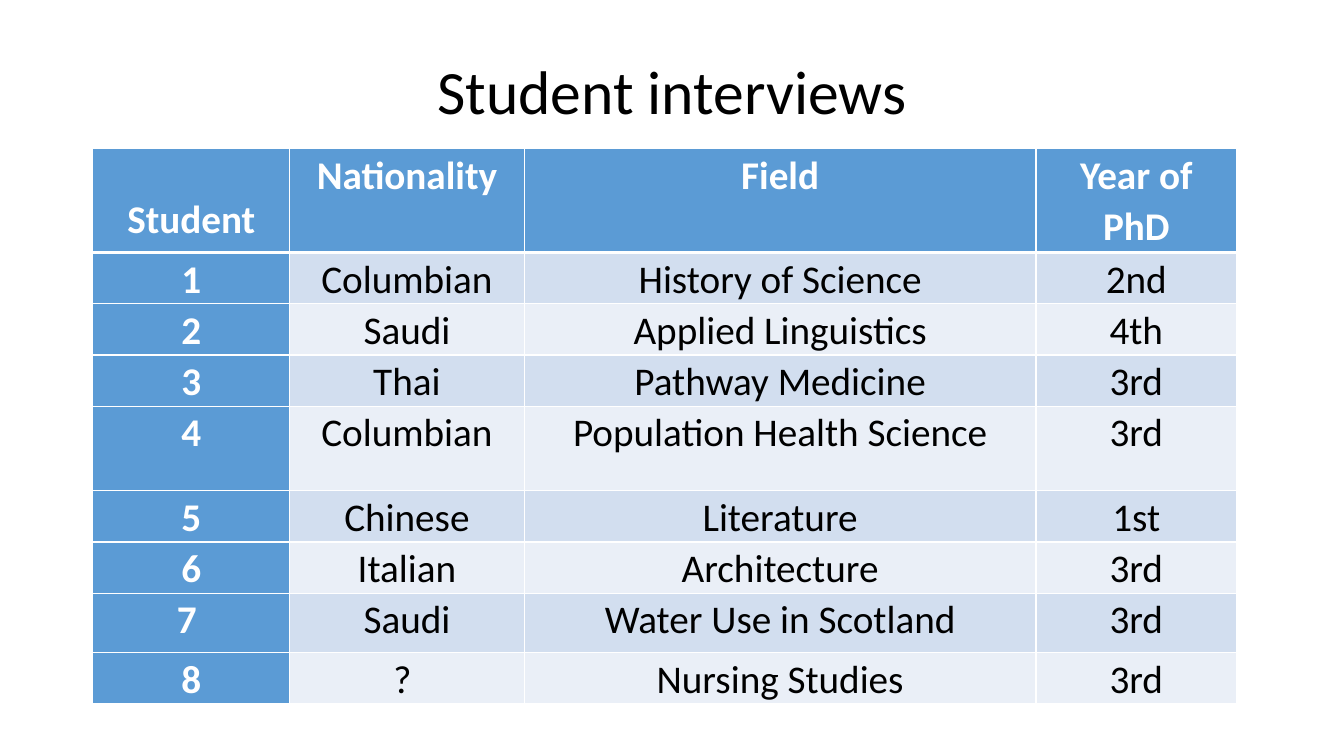
"""Build a slide with a table of student interviews."""
import lxml.etree
import pptx
import pptx.dml.color
import pptx.enum.text
import pptx.oxml.ns
import pptx.util
from dataclasses import dataclass

Cm = pptx.util.Cm
Pt = pptx.util.Pt

TITLE = "Student interviews"
ROWS = [
    ("Student", "Nationality", "Field", "Year of PhD"),
    ("1", "Columbian", "History of Science", "2nd"),
    ("2", "Saudi", "Applied Linguistics", "4th"),
    ("3", "Thai", "Pathway Medicine", "3rd"),
    ("4", "Columbian", "Population Health Science", "3rd"),
    ("5", "Chinese", "Literature", "1st"),
    ("6", "Italian", "Architecture", "3rd"),
    ("7 ", "Saudi", "Water Use in Scotland", "3rd"),
    ("8", "? ", "Nursing Studies", "3rd"),
]
COLUMN_WIDTHS = [4.96, 5.91, 12.9, 5.05]
ROW_HEIGHT = 1.28
TALL_ROWS = {0: 2.62, 4: 2.13, 7: 1.5}
TABLE_LEFT, TABLE_TOP = 2.34, 3.74


@dataclass(frozen=True)
class Theme:
    """Colours, font and type sizes."""
    font: str = "Calibri"
    title_size: int = 44
    table_size: int = 28
    dark: str = "000000"
    light: str = "FFFFFF"
    accent: str = "5B9BD5"
    bands: tuple = ("EAEFF7", "D2DEEF")


THEME = Theme()


def rgb(colour):
    """Turn a hex string into a colour."""
    return pptx.dml.color.RGBColor.from_string(colour)


def style_paragraph(para, size, colour, bold, spacing):
    """Centre a paragraph and set its font."""
    para.alignment = pptx.enum.text.PP_ALIGN.CENTER
    para.line_spacing = spacing
    para.font.name = THEME.font
    para.font.size = Pt(size)
    para.font.bold = bold
    para.font.color.rgb = rgb(colour)


def add_borders(cell, row):
    """Rule a cell, with a thick line under the header."""
    top = 3 if row == 1 else 1
    bottom = 3 if row == 0 else 1
    properties = cell._tc.get_or_add_tcPr()
    qn = pptx.oxml.ns.qn
    sides = {"a:lnL": 1, "a:lnR": 1, "a:lnT": top, "a:lnB": bottom}
    for position, (side, width) in enumerate(sides.items()):
        line = lxml.etree.Element(qn(side), w=str(Pt(width)))
        fill = lxml.etree.SubElement(line, qn("a:solidFill"))
        lxml.etree.SubElement(fill, qn("a:srgbClr"), val=THEME.light)
        properties.insert(position, line)


def fill_cell(cell, text, row, column):
    """Write and format one table cell."""
    heading = row == 0 or column == 0
    cell.text = text
    cell.margin_left = cell.margin_right = Cm(0.19)
    cell.margin_top = cell.margin_bottom = 0
    cell.fill.solid()
    cell.fill.fore_color.rgb = rgb(THEME.accent if heading else THEME.bands[row % 2])
    spacing = 2.0 if row == column == 0 else 1.07
    colour = THEME.light if heading else THEME.dark
    style_paragraph(cell.text_frame.paragraphs[0], THEME.table_size, colour, heading, spacing)
    add_borders(cell, row)


def add_title(page):
    """Place and format the title."""
    title = page.shapes.title
    title.left, title.top, title.width, title.height = Cm(2.33), Cm(1.01), Cm(29.21), Cm(2.73)
    title.text_frame.text = TITLE
    title.text_frame.vertical_anchor = pptx.enum.text.MSO_ANCHOR.MIDDLE
    style_paragraph(title.text_frame.paragraphs[0], THEME.title_size, THEME.dark, False, 0.9)


def add_interviews(page):
    """Add the table of interviews."""
    heights = [TALL_ROWS.get(row, ROW_HEIGHT) for row in range(len(ROWS))]
    table = page.shapes.add_table(
        len(ROWS), len(COLUMN_WIDTHS), Cm(TABLE_LEFT), Cm(TABLE_TOP),
        Cm(sum(COLUMN_WIDTHS)), Cm(sum(heights))).table
    table.first_col = True
    for column, width in zip(table.columns, COLUMN_WIDTHS):
        column.width = Cm(width)
    for row, (height, texts) in enumerate(zip(heights, ROWS)):
        table.rows[row].height = Cm(height)
        for column, text in enumerate(texts):
            fill_cell(table.cell(row, column), text, row, column)


def main():
    """Build and save the deck."""
    deck = pptx.Presentation()
    deck.slide_width, deck.slide_height = Cm(33.87), Cm(19.05)
    page = deck.slides.add_slide(deck.slide_layouts.get_by_name("Title Only"))
    add_title(page)
    add_interviews(page)
    deck.save("out.pptx")


if __name__ == "__main__":
    main()
